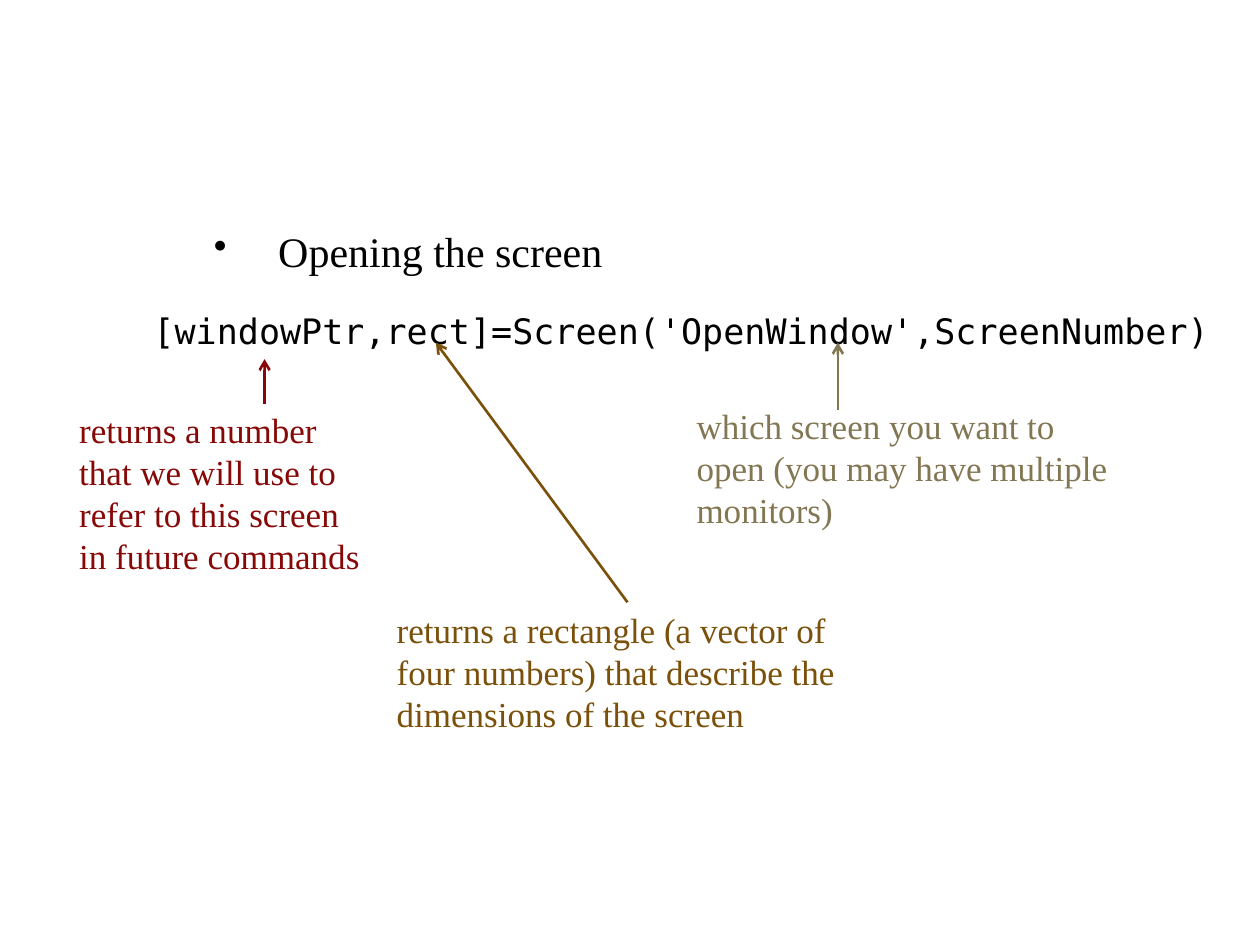
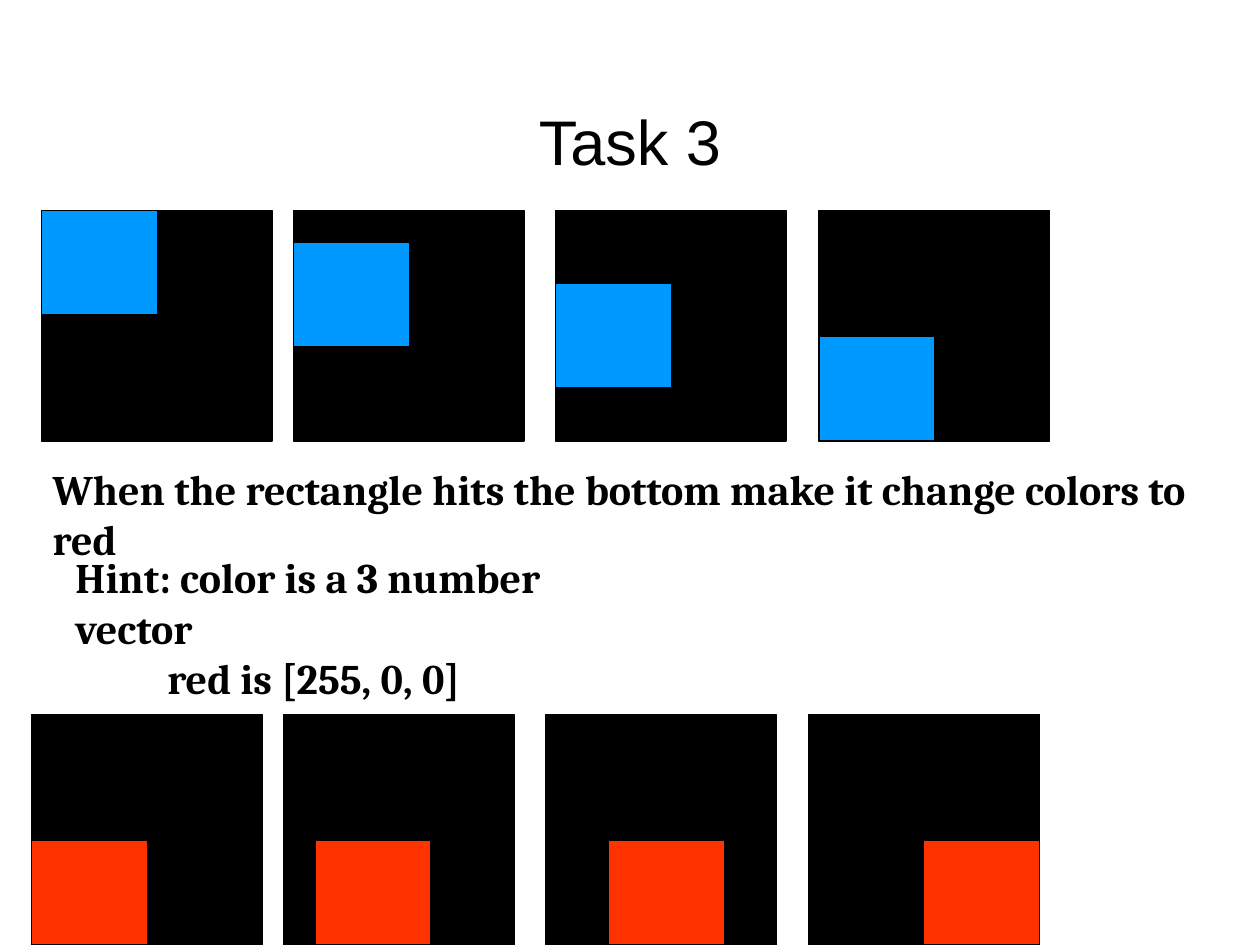
import pptx
import pptx.util
import pptx.dml.color
import pptx.enum.shapes
import pptx.enum.text
import pptx.oxml.ns
from dataclasses import dataclass
from lxml import etree
from pptx.util import Inches


@dataclass(frozen=True)
class Theme:
    black: str = "000000"
    maroon: str = "860908"
    brown: str = "7A500A"
    olive: str = "827752"
    blue: str = "0099FF"
    red: str = "FF3300"
    title_font: str = "Arial"
    body_font: str = "Times New Roman"
    code_font: str = "DejaVu Sans Mono"
    task_font: str = "Cambria"
    title_size: int = 36
    body_size: int = 24
    note_size: int = 20


theme = Theme()
rgb = pptx.dml.color.RGBColor.from_string
qn = pptx.oxml.ns.qn


def add_text(s, box, lines, font, size, color=theme.black, bold=False):
    """Add a wrapping text box at (left, top, width, height), one paragraph per line."""
    tf = s.shapes.add_textbox(*map(Inches, box)).text_frame
    tf.word_wrap = True
    tf.text = "\n".join(lines)
    for p in tf.paragraphs:
        for r in p.runs:
            r.font.name = font
            r.font.size = pptx.util.Pt(size)
            r.font.bold = bold
            r.font.color.rgb = rgb(color)
    return tf


def add_rect(s, left, top, width, height, fill):
    sp = s.shapes.add_shape(pptx.enum.shapes.MSO_SHAPE.RECTANGLE,
                            *map(Inches, (left, top, width, height)))
    sp.shadow.inherit = False
    sp.fill.solid()
    sp.fill.fore_color.rgb = rgb(fill)
    sp.line.color.rgb = rgb(theme.black)
    sp.line.width = pptx.util.Pt(0.75)


prs = pptx.Presentation()
prs.slide_width, prs.slide_height = Inches(10), Inches(7.5)
blank = prs.slide_layouts[6]

# Slide 1: the screen command with its annotations
s = prs.slides.add_slide(blank)
tf = add_text(s, (1.6, 1.74, 5.8, 3.27), ["Opening the screen"],
              theme.body_font, theme.body_size)
pPr = tf.paragraphs[0]._p.get_or_add_pPr()
pPr.set("marL", str(Inches(0.51)))
pPr.set("indent", str(Inches(-0.51)))
etree.SubElement(pPr, qn("a:buSzPct"), val="90000")
etree.SubElement(pPr, qn("a:buChar"), char="•")

add_text(s, (1.12, 2.41, 8.6, 0.44),
         ["[windowPtr,rect]=Screen('OpenWindow',ScreenNumber)"],
         theme.code_font, theme.note_size)

# text, text box, colour, arrow start, arrow end
notes = [
    ("which screen you want to open (you may have multiple monitors)",
     (5.43, 3.16, 3.57, 1.11), theme.olive, (6.65, 3.25), (6.65, 2.72)),
    ("returns a number that we will use to refer to this screen in future commands",
     (0.53, 3.19, 2.52, 1.45), theme.maroon, (2.1, 3.21), (2.1, 2.85)),
    ("returns a rectangle (a vector of four numbers) that describe the "
     "dimensions of the screen",
     (3.05, 4.78, 3.86, 1.11), theme.brown, (4.98, 4.78), (3.46, 2.72)),
]
for text, box, color, start, end in notes:
    add_text(s, box, [text], theme.body_font, theme.note_size, color)
    arrow = s.shapes.add_connector(pptx.enum.shapes.MSO_CONNECTOR.STRAIGHT,
                                   *map(Inches, start + end))
    arrow.line.color.rgb = rgb(color)
    arrow.line.width = pptx.util.Pt(1.5)
    etree.SubElement(arrow.line._get_or_add_ln(), qn("a:tailEnd"), type="arrow")
    etree.SubElement(arrow._element.spPr, qn("a:effectLst"))

# Slide 2: a square falls, turns red and slides right
s = prs.slides.add_slide(blank)
tf = add_text(s, (0.5, 0.67, 9, 0.88), ["Task 3"], theme.title_font, theme.title_size)
tf.vertical_anchor = pptx.enum.text.MSO_ANCHOR.MIDDLE
tf.paragraphs[0].alignment = pptx.enum.text.PP_ALIGN.CENTER

frame_size = 1.83
square_w, square_h = 0.92, 0.83
frame_lefts = [0.25, 2.25, 4.33, 6.42]
# row shift, row top, square colour, square offsets within each frame
rows = [
    (0.08, 1.67, theme.blue, [(0, 0), (0, 0.25), (0, 0.58), (0, 1)]),
    (0, 5.67, theme.red, [(0, 1), (0.25, 1), (0.5, 1), (0.91, 1)]),
]
for shift, top, color, offsets in rows:
    for frame_left, (dx, dy) in zip(frame_lefts, offsets):
        left = frame_left + shift
        add_rect(s, left, top, frame_size, frame_size, theme.black)
        add_rect(s, left + dx, top + dy, square_w, square_h, color)

add_text(s, (0.32, 3.63, 9.68, 0.5),
         ["When the rectangle hits the bottom make it change colors to red"],
         theme.task_font, theme.body_size, bold=True)
tf = add_text(s, (0.5, 4.33, 4.76, 0.9),
              ["Hint: color is a 3 number vector", "red is [255, 0, 0]"],
              theme.task_font, theme.body_size, bold=True)
tf.paragraphs[1]._p.get_or_add_pPr().set("marL", str(Inches(0.73)))

prs.save("out.pptx")
